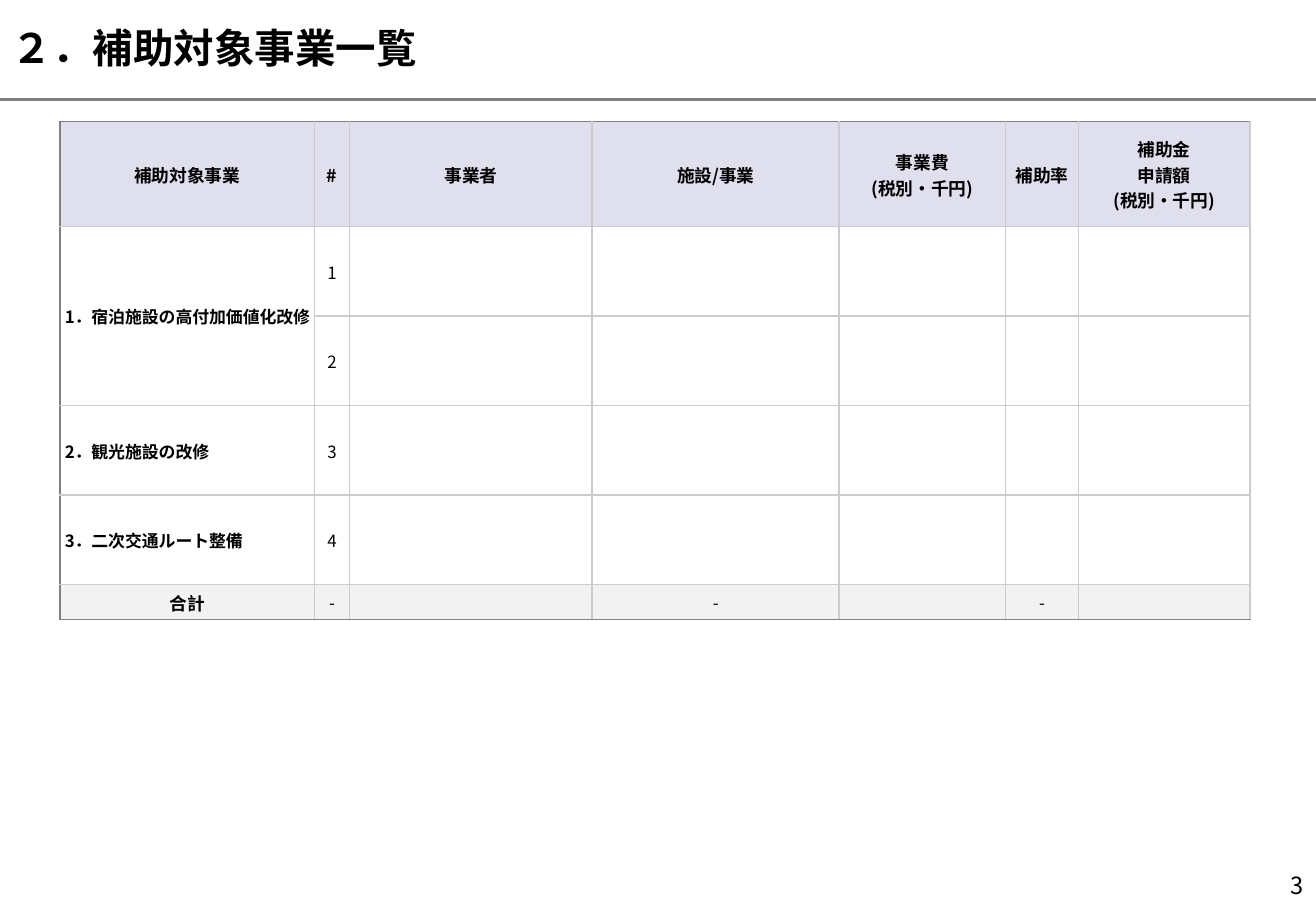
from pptx import Presentation
from pptx.dml.color import RGBColor
from pptx.enum.shapes import MSO_CONNECTOR
from pptx.enum.text import MSO_ANCHOR as ANCHOR, PP_ALIGN as ALIGN
from pptx.oxml.ns import qn
from pptx.util import Pt
from lxml.etree import SubElement

FONT = "Noto Sans CJK JP"
WIDTH, HEIGHT = 780, 540
GREY, LIGHT_GREY = "808080", "CCCCCC"
HEADER_FILL, TOTAL_FILL = "DFDFED", "F2F2F2"

COLUMN_WIDTHS = [151, 20.8, 143.8, 146.4, 98.6, 43.4, 101.4]
ROW_HEIGHTS = [62.4, 53, 53, 53, 53, 20.8]
ROWS = [
    ["補助対象事業", "#", "事業者", "施設/事業", "事業費\n(税別・千円)", "補助率",
     "補助金\n申請額\n(税別・千円)"],
    ["1．宿泊施設の高付加価値化改修", "1", "", "", "", "", ""],
    ["", "2", "", "", "", "", ""],
    ["2．観光施設の改修", "3", "", "", "", "", ""],
    ["3．二次交通ルート整備", "4", "", "", "", "", ""],
    ["合計", "-", "", "-", "", "-", ""],
]
TOTAL_ROW = len(ROWS) - 1


def color(hex_code):
    return RGBColor.from_string(hex_code)


def write(frame, text, size=10, bold=False, align=ALIGN.LEFT, hanging=0):
    frame.word_wrap = True
    for number, line in enumerate(text.split("\n")):
        paragraph = frame.add_paragraph() if number else frame.paragraphs[0]
        paragraph.alignment = align
        if hanging:
            properties = paragraph._p.get_or_add_pPr()
            properties.set("marL", str(Pt(hanging)))
            properties.set("indent", str(-Pt(hanging)))
        if not line:
            # Keeps an empty cell from growing to the default text size
            SubElement(paragraph._p, qn("a:endParaRPr"), sz=str(int(size * 100)))
            continue
        run = paragraph.add_run()
        run.text = line
        run.font.size, run.font.bold, run.font.name = Pt(size), bold, FONT
        run.font.color.rgb = color("000000")
        SubElement(run._r.get_or_add_rPr(), qn("a:ea"), typeface=FONT)


def set_borders(cell, **side_colors):
    properties = cell._tc.get_or_add_tcPr()
    for side in "LRTB":
        line = SubElement(properties, qn(f"a:ln{side}"), w=str(Pt(1)))
        fill = SubElement(line, qn("a:solidFill"))
        SubElement(fill, qn("a:srgbClr"), val=side_colors.get(side, LIGHT_GREY))


def add_heading(slide, left, top, width, height):
    title = slide.shapes.add_textbox(Pt(left), Pt(top), Pt(651), Pt(height - 3.6))
    title.text_frame.vertical_anchor = ANCHOR.MIDDLE
    write(title.text_frame, "２．補助対象事業一覧", size=24, bold=True, hanging=21)
    rule_y = Pt(top + height)
    rule = slide.shapes.add_connector(
        MSO_CONNECTOR.STRAIGHT, Pt(left), rule_y, Pt(left + width), rule_y)
    rule.line.color.rgb = color(GREY)
    rule.line.width = Pt(1.5)
    SubElement(rule._element.spPr, qn("a:effectLst"))


def format_cell(cell, text, row, column):
    is_header, is_total = row == 0, row == TOTAL_ROW
    is_project = column == 0 and not (is_header or is_total)
    side = 0 if is_header else 0.7
    cell.margin_left = Pt(2.9 if is_project else side)
    cell.margin_right = Pt(side)
    cell.margin_top, cell.margin_bottom = Pt(0.7), 0
    cell.vertical_anchor = ANCHOR.MIDDLE

    outer = {"L": column == 0, "T": is_header, "B": is_total}
    set_borders(cell, **{edge: GREY for edge, on in outer.items() if on})
    if is_header or is_total:
        cell.fill.solid()
        cell.fill.fore_color.rgb = color(HEADER_FILL if is_header else TOTAL_FILL)
    else:
        cell.fill.background()

    write(cell.text_frame, text,
          size=10.5 if is_header or (is_total and column == 0) else 10,
          bold=is_header or column == 0,
          align=ALIGN.LEFT if is_project else ALIGN.CENTER,
          hanging=14.4 if is_project and row == 1 else 0)


def add_project_table(slide, left, top):
    table = slide.shapes.add_table(
        len(ROWS), len(COLUMN_WIDTHS), Pt(left), Pt(top),
        Pt(sum(COLUMN_WIDTHS)), Pt(sum(ROW_HEIGHTS))).table
    table.first_row = table.horz_banding = False
    for column, width in zip(table.columns, COLUMN_WIDTHS):
        column.width = Pt(width)
    for row, height in zip(table.rows, ROW_HEIGHTS):
        row.height = Pt(height)
    for r, texts in enumerate(ROWS):
        for c, text in enumerate(texts):
            format_cell(table.cell(r, c), text, r, c)
    table.cell(1, 0).merge(table.cell(2, 0))


def add_page_number(slide, left, top, width, height):
    number = slide.shapes.add_textbox(Pt(left), Pt(top), Pt(width), Pt(height))
    write(number.text_frame, "3", size=14, align=ALIGN.RIGHT)


def main():
    deck = Presentation()
    deck.slide_width, deck.slide_height = Pt(WIDTH), Pt(HEIGHT)
    slide = deck.slides.add_slide(deck.slide_layouts[6])
    add_heading(slide, 0, 0.7, WIDTH, 58.3)
    add_project_table(slide, 35.5, 72)
    add_page_number(slide, WIDTH - 39, HEIGHT - 27.4, 39, 27.4)
    deck.save("out.pptx")


if __name__ == "__main__":
    main()
